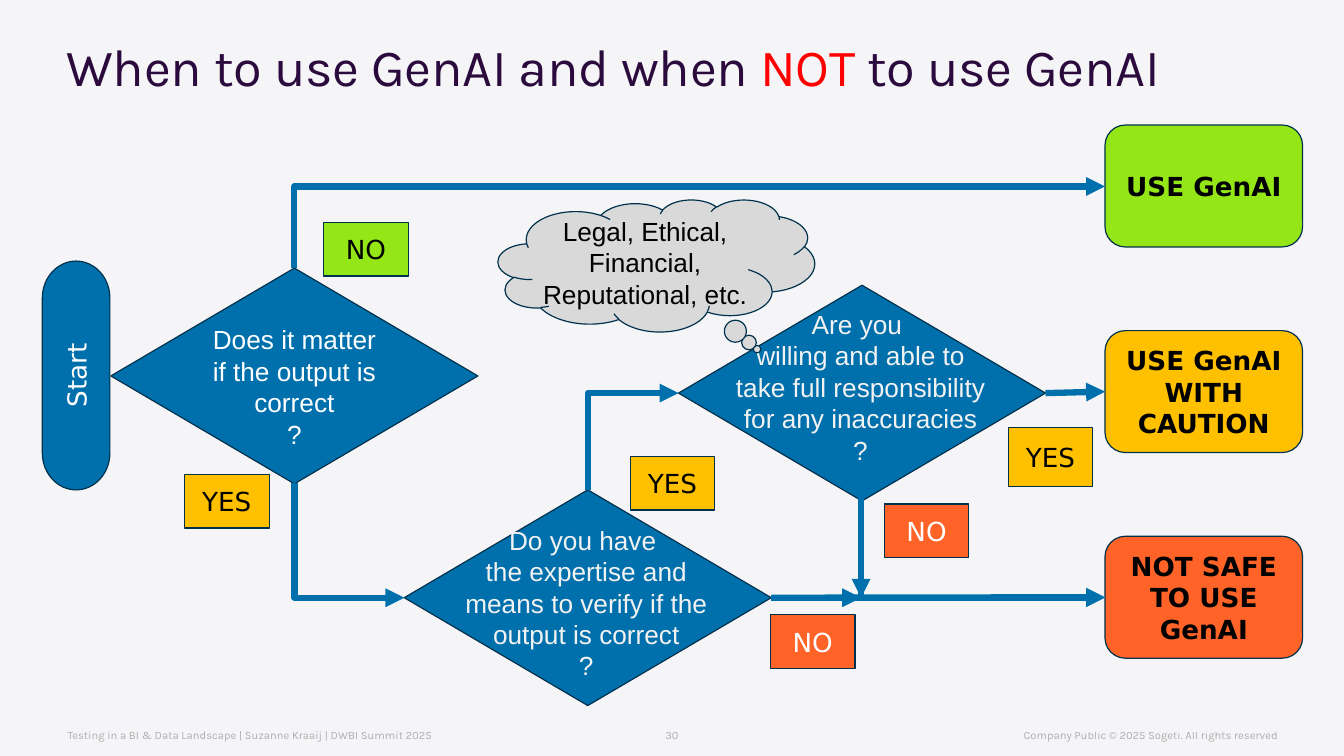
from lxml import etree
from pptx import Presentation
from pptx.dml.color import RGBColor
from pptx.enum.shapes import MSO_CONNECTOR, MSO_SHAPE
from pptx.enum.text import MSO_ANCHOR, PP_ALIGN
from pptx.oxml.ns import qn
from pptx.util import Inches, Pt

STRAIGHT, ELBOW = MSO_CONNECTOR.STRAIGHT, MSO_CONNECTOR.ELBOW
TERMINATOR = MSO_SHAPE.FLOWCHART_TERMINATOR
DECISION = MSO_SHAPE.FLOWCHART_DECISION
RECTANGLE = MSO_SHAPE.RECTANGLE
ROUNDED = MSO_SHAPE.ROUNDED_RECTANGLE
CLOUD = MSO_SHAPE.CLOUD_CALLOUT
TOP, MIDDLE = MSO_ANCHOR.TOP, MSO_ANCHOR.MIDDLE
LEFT, CENTER, RIGHT = PP_ALIGN.LEFT, PP_ALIGN.CENTER, PP_ALIGN.RIGHT
SIDE_LEFT, SIDE_RIGHT = 1, 3

BLUE, NAVY, PURPLE = "0070AD", "00314C", "2B0A3D"
GREEN, AMBER, ORANGE = "95E616", "FFC000", "FF6327"
WHITE, PALE, BLACK, RED = "FFFFFF", "F2F2F2", "000000", "FF0000"
GREY, CLOUD_GREY, BACKGROUND = "808080", "D9D9D9", "F5F5F7"
SANS, BODY, BRAND = "DejaVu Sans", "Arial", "Karla"


def rgb(color):
    return RGBColor.from_string(color)


def add_span(para, text, size=18.7, font=SANS, color=BLACK, bold=False,
             spacing=None, alpha=None):
    span = para.add_run()
    span.text = text
    span.font.size = Pt(size)
    span.font.name = font
    span.font.bold = bold
    span.font.color.rgb = rgb(color)
    properties = span.font._element
    if spacing is not None:
        properties.set("spc", str(round(spacing * 100)))
    if alpha is not None:
        shade = properties.find(".//" + qn("a:srgbClr"))
        etree.SubElement(shade, qn("a:alpha")).set("val", str(alpha * 1000))


def write(box, text, align=CENTER, anchor=MIDDLE,
          insets=(0.1, 0.05, 0.1, 0.05), **span_format):
    frame = box.text_frame
    frame.word_wrap = True
    frame.vertical_anchor = anchor
    (frame.margin_left, frame.margin_top,
     frame.margin_right, frame.margin_bottom) = map(Inches, insets)
    for number, content in enumerate(text.split("\n")):
        para = frame.add_paragraph() if number else frame.paragraphs[0]
        para.alignment = align
        for position, line in enumerate(content.split("\v")):
            if position:
                para.add_line_break()
            add_span(para, line, **span_format)


class Flowchart:
    outline, outline_width = NAVY, 0.85
    arrow_color, arrow_width = BLUE, 4.5

    def __init__(self, deck):
        self.page = deck.slides.add_slide(deck.slide_layouts[6])
        self.page.background.fill.solid()
        self.page.background.fill.fore_color.rgb = rgb(BACKGROUND)

    def text(self, left, top, width, height, text, **text_format):
        box = self.page.shapes.add_textbox(*map(Inches, (left, top, width, height)))
        write(box, text, **text_format)
        return box

    def shape(self, kind, left, top, width, height, fill, text="", **text_format):
        box = self.page.shapes.add_shape(kind, *map(Inches, (left, top, width, height)))
        box.shadow.inherit = False
        box.fill.solid()
        box.fill.fore_color.rgb = rgb(fill)
        box.line.color.rgb = rgb(self.outline)
        box.line.width = Pt(self.outline_width)
        if text:
            write(box, text, **text_format)
        return box

    def decision(self, left, top, text="", **text_format):
        return self.shape(DECISION, left, top, 3.64, 2.14, BLUE, text,
                          font=BODY, **text_format)

    def answer(self, left, top, text, fill, color=BLACK, height=0.53):
        self.shape(RECTANGLE, left, top, 0.84, height, fill, text, color=color)

    def connector(self, kind, start, end):
        link = self.page.shapes.add_connector(kind, *map(Inches, (*start, *end)))
        link.line.color.rgb = rgb(self.arrow_color)
        link.line.width = Pt(self.arrow_width)
        etree.SubElement(link.line._get_or_add_ln(), qn("a:tailEnd")).set("type", "triangle")
        etree.SubElement(link._element.spPr, qn("a:effectLst"))
        return link

    def arrow(self, start, end, source=None, target=None):
        link = self.connector(STRAIGHT, start, end)
        if source:
            link.begin_connect(source, SIDE_RIGHT)
        if target:
            link.end_connect(target, SIDE_LEFT)

    def bent_arrow(self, start, end):
        (x1, y1), (x2, y2) = start, end
        middle_x, middle_y = (x1 + x2) / 2, (y1 + y2) / 2
        half_run, half_rise = (x2 - x1) / 2, (y2 - y1) / 2
        half_width = abs(half_rise)
        upward = half_rise < 0
        offset = half_run if upward else -half_run
        link = self.connector(ELBOW, (middle_x + half_width, middle_y + offset),
                              (middle_x - half_width, middle_y - offset))
        properties = link._element.spPr
        properties.find(qn("a:prstGeom")).set("prst", "bentConnector2")
        properties.find(qn("a:xfrm")).set("rot", str((90 if upward else 270) * 60000))


def main():
    deck = Presentation()
    deck.slide_width, deck.slide_height = Inches(13.33), Inches(7.5)
    chart = Flowchart(deck)

    footers = [
        (7.08, 5.6, "Company Public © 2025 Sogeti. All rights reserved", RIGHT),
        (0.67, 5.29, "Testing in a BI & Data Landscape | Suzanne Kraaij | DWBI Summit 2025", LEFT),
        (6.33, 0.67, "30", CENTER),
    ]
    for left, width, text, align in footers:
        chart.text(left, 7.14, width, 0.31, text, align=align, insets=(0, 0.05, 0, 0.05),
                   size=8, font=BRAND, color=GREY, alpha=60)

    title_format = dict(size=37.3, font=BRAND, spacing=-0.2)
    title = chart.text(0.66, 0.17, 12.01, 1.04, "When to use GenAI and when ", align=LEFT,
                       insets=(0, 0, 0, 0), color=PURPLE, **title_format)
    heading = title.text_frame.paragraphs[0]
    heading.line_spacing = 0.9
    add_span(heading, "NOT", color=RED, **title_format)
    add_span(heading, " to use GenAI", color=PURPLE, **title_format)

    start = chart.shape(TERMINATOR, -0.38, 3.39, 2.27, 0.67, BLUE, "Start", color=WHITE)
    start.rotation = 270

    chart.decision(1.1, 2.66, "Does it matter if the output is correct\n?",
                   insets=(0, 0.26, 0, 0.05), color=WHITE)
    expertise = chart.decision(4.01, 4.86)
    chart.text(4.35, 5.15, 2.93, 1.67,
               "Do you have \vthe expertise and means to verify if the output is correct\n?",
               anchor=TOP, font=BODY, color=PALE)
    responsibility = chart.decision(6.73, 2.83)
    chart.text(7.07, 3.01, 2.93, 1.67,
               "Are you \vwilling and able to\vtake full responsibility\v"
               "for any inaccuracies\n?",
               anchor=TOP, font=BODY, color=PALE)

    chart.answer(3.21, 2.21, "NO", GREEN)
    chart.answer(1.83, 4.71, "YES", AMBER)
    chart.answer(7.64, 6.1, "NO", ORANGE, WHITE)
    chart.answer(6.25, 4.53, "YES", AMBER)
    chart.answer(8.77, 5, "NO", ORANGE, WHITE)
    chart.answer(10, 4.24, "YES", AMBER, height=0.59)

    outcomes = [("USE GenAI", GREEN), ("USE GenAI WITH CAUTION", AMBER),
                ("NOT SAFE TO USE GenAI", ORANGE)]
    use, caution, unsafe = [
        chart.shape(ROUNDED, 10.96, 1.24 + 2.04 * row, 1.96, 1.21, fill, text, bold=True)
        for row, (text, fill) in enumerate(outcomes)
    ]

    chart.bent_arrow((2.92, 2.66), (10.96, 1.85))
    chart.bent_arrow((5.83, 4.86), (6.73, 3.9))
    chart.bent_arrow((2.92, 4.79), (4.01, 5.93))
    chart.arrow((7.65, 5.93), (10.96, 5.93), expertise, unsafe)
    chart.arrow((10.37, 3.9), (10.96, 3.88), responsibility, caution)
    chart.bent_arrow((8.54, 4.97), (10.96, 5.93))

    cloud = chart.shape(CLOUD, 4.94, 1.98, 3.14, 1.31, CLOUD_GREY,
                        "Legal, Ethical, Financial, Reputational, etc.",
                        insets=(0, 0, 0, 0), font=BODY)
    cloud.adjustments[0], cloud.adjustments[1] = 0.318, 0.633

    chart.arrow((7.65, 5.93), (8.54, 5.93), expertise)
    chart.arrow((8.54, 4.79), (8.54, 5.93))

    deck.save("out.pptx")


if __name__ == "__main__":
    main()
